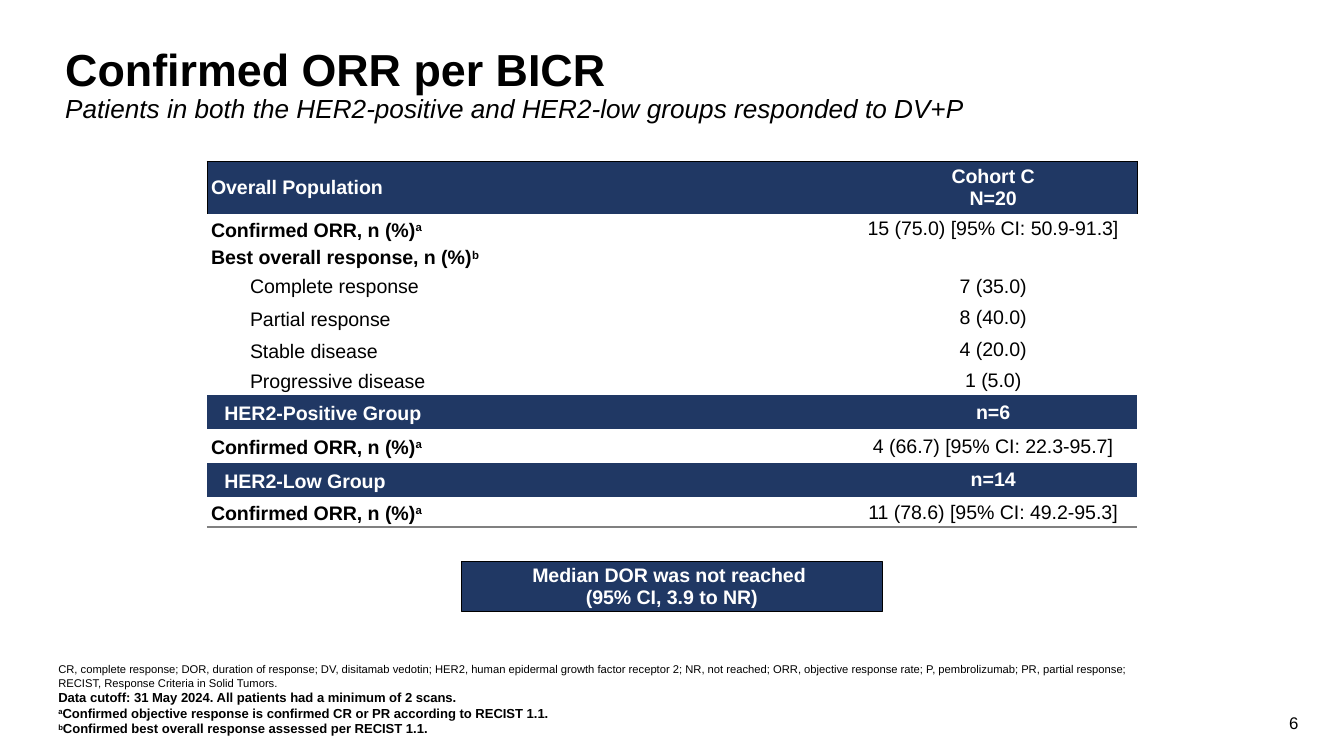
from dataclasses import dataclass

from lxml import etree
from pptx import Presentation
from pptx.dml.color import RGBColor
from pptx.enum.shapes import MSO_SHAPE
from pptx.enum.text import MSO_ANCHOR, PP_ALIGN
from pptx.oxml.ns import qn
from pptx.util import Inches, Pt

LEFT, CENTER, RIGHT = PP_ALIGN.LEFT, PP_ALIGN.CENTER, PP_ALIGN.RIGHT
TOP, MIDDLE, BOTTOM = MSO_ANCHOR.TOP, MSO_ANCHOR.MIDDLE, MSO_ANCHOR.BOTTOM
RECTANGLE = MSO_SHAPE.RECTANGLE
PLAIN_TABLE = "{2D5ABB26-0587-4C30-8999-92F81FD0307C}"
GRID_COLUMNS, GRID_ROWS = 100, 56.25


@dataclass(frozen=True)
class Theme:
    font: str = "Arial"
    ink: str = "000000"
    paper: str = "FFFFFF"
    navy: str = "203864"
    rule: str = "808080"
    title: float = 24
    subtitle: float = 14
    body: float = 10.5
    page: float = 9
    note: float = 7
    abbreviation: float = 6


THEME = Theme()


def write(frame, paragraphs, anchor=TOP, align=LEFT, spacing=None, indent=0, **base):
    frame.word_wrap = True
    frame.vertical_anchor = anchor
    for index, segments in enumerate(paragraphs):
        paragraph = frame.paragraphs[0] if index == 0 else frame.add_paragraph()
        paragraph.alignment = align
        if spacing:
            paragraph.line_spacing = spacing
        if indent:
            paragraph._p.get_or_add_pPr().set("marL", str(Inches(indent)))
        for text, changes in segments:
            for part, line in enumerate(text.split("\n")):
                if part:
                    paragraph.add_line_break()
                if line:
                    style_run(paragraph.add_run(), line, **{**base, **changes})


def style_run(run, text, size=THEME.body, color=THEME.ink, bold=False, italic=False, raised=False):
    run.text = text
    font = run.font
    font.name, font.size = THEME.font, Pt(size)
    font.bold, font.italic = bold, italic
    font.color.rgb = RGBColor.from_string(color)
    if raised:
        font._element.set("baseline", "30000")


def plain(*lines):
    return [[(line, {})] for line in lines]


def marked(text, mark):
    return [[(text, {}), (mark, {"raised": True})]]


class SlideBuilder:
    def __init__(self, presentation, theme):
        self.theme = theme
        self.slide = presentation.slides.add_slide(presentation.slide_layouts[6])
        self.column = presentation.slide_width / GRID_COLUMNS
        self.row = presentation.slide_height / GRID_ROWS

    def place(self, column, row, columns, rows):
        return (round(column * self.column), round(row * self.row),
                round(columns * self.column), round(rows * self.row))

    def text(self, area, paragraphs, **style):
        box = self.slide.shapes.add_textbox(*self.place(*area))
        write(box.text_frame, paragraphs, **style)

    def callout(self, area, paragraphs, **style):
        box = self.slide.shapes.add_shape(RECTANGLE, *self.place(*area))
        box.shadow.inherit = False
        box.fill.solid()
        box.fill.fore_color.rgb = RGBColor.from_string(self.theme.navy)
        box.line.color.rgb = RGBColor.from_string(self.theme.ink)
        box.line.width = Pt(0.75)
        write(box.text_frame, paragraphs, anchor=MIDDLE, align=CENTER, **style)

    def table(self, area, widths, heights):
        table = self.slide.shapes.add_table(len(heights), len(widths), *self.place(*area)).table
        table._tbl.tblPr.find(qn("a:tableStyleId")).text = PLAIN_TABLE
        table.first_row = table.horz_banding = False
        for column, width in zip(table.columns, widths):
            column.width = round(width * self.column)
        for row, height in zip(table.rows, heights):
            row.height = round(height * self.row)
        return table

    def cell(self, cell, paragraphs, fill=None, borders=(), **style):
        cell.margin_left = cell.margin_right = Inches(0.03)
        cell.margin_top = cell.margin_bottom = 0
        for side, color, width in borders:
            self.border(cell, side, color, width)
        if fill:
            cell.fill.solid()
            cell.fill.fore_color.rgb = RGBColor.from_string(fill)
        else:
            cell.fill.background()
        write(cell.text_frame, paragraphs, **style)
        cell.vertical_anchor = MIDDLE
        if not paragraphs:
            end = etree.SubElement(cell.text_frame.paragraphs[0]._p, qn("a:endParaRPr"))
            end.set("sz", str(round(self.theme.body * 100)))

    def border(self, cell, side, color, width):
        edge = etree.SubElement(cell._tc.get_or_add_tcPr(), qn(f"a:ln{side}"), w=str(Pt(width)))
        paint = etree.SubElement(edge, qn("a:solidFill"))
        etree.SubElement(paint, qn("a:srgbClr"), val=color)


def add_responses(builder):
    theme = builder.theme
    confirmed = marked("Confirmed ORR, n (%)", "a")
    header_edges = [[("L", theme.ink, 0.5), ("T", theme.ink, 0.5)],
                    [("R", theme.ink, 0.5), ("T", theme.ink, 0.5)]]
    closing_edges = [[("B", theme.rule, 1)]] * 2
    open_edges = [()] * 2
    band = {"fill": theme.navy, "color": theme.paper}
    label = {"bold": True, "spacing": 1.15}
    group = {"bold": True, "spacing": 1.15, "indent": 0.1}
    response = {"spacing": 1.15, "indent": 0.29}
    white = {"fill": theme.paper}
    header, tight, normal, tall = 3.9, 2.14, 2.24, 2.53
    rows = [
        (header, plain("Overall Population"), plain("Cohort C", "N=20"),
         band, {"bold": True}, header_edges),
        (normal, confirmed, plain("15 (75.0) [95% CI: 50.9-91.3]"), {}, label, open_edges),
        (tight, marked("Best overall response, n (%)", "b"), [], {}, {"bold": True}, open_edges),
        (tight, plain("Complete response"), plain("7 (35.0)"), {}, {"indent": 0.29}, open_edges),
        (tall, plain("Partial response"), plain("8 (40.0)"), {}, response, open_edges),
        (normal, plain("Stable disease"), plain("4 (20.0)"), {}, response, open_edges),
        (normal, plain("Progressive disease"), plain("1 (5.0)"), {}, response, open_edges),
        (tall, plain("HER2-Positive Group"), plain("n=6"), band, group, open_edges),
        (tall, confirmed, plain("4 (66.7) [95% CI: 22.3-95.7]"), white, label, open_edges),
        (tall, plain("HER2-Low Group"), plain("n=14"), band, group, open_edges),
        (normal, confirmed, plain("11 (78.6) [95% CI: 49.2-95.3]"), white, label, closing_edges),
    ]
    heights = [row[0] for row in rows]
    table = builder.table((15.4, 12, 69.2, sum(heights)), (47.8, 21.4), heights)
    for index, (_, measure, result, look, measure_style, edges) in enumerate(rows):
        builder.cell(table.cell(index, 0), measure, borders=edges[0], **look, **measure_style)
        builder.cell(table.cell(index, 1), result, borders=edges[1], align=CENTER,
                     bold=look is band, **look)


def main():
    presentation = Presentation()
    presentation.slide_width = Inches(10)
    presentation.slide_height = presentation.slide_width * 9 // 16
    builder = SlideBuilder(presentation, THEME)

    builder.text((3.87, 3.07, 76.1, 6.9), [[
        ("Confirmed ORR per BICR\n", {"size": THEME.title, "bold": True}),
        ("Patients in both the HER2-positive and HER2-low groups responded to DV+P",
         {"size": THEME.subtitle, "italic": True}),
    ]], spacing=0.9)

    abbreviations = (
        "CR, complete response; DOR, duration of response; DV, disitamab vedotin; "
        "HER2, human epidermal growth factor receptor 2; NR, not reached; "
        "ORR, objective response rate; P, pembrolizumab; PR, partial response; \n"
        "RECIST, Response Criteria in Solid Tumors.\n")
    builder.text((3.36, 50.6, 97, 4.7), [[
        (abbreviations, {"size": THEME.abbreviation, "bold": False}),
        ("Data cutoff: 31 May 2024. All patients had a minimum of 2 scans.\n", {}),
        ("a", {"raised": True}),
        ("Confirmed objective response is confirmed CR or PR according to RECIST 1.1. \n", {}),
        ("b", {"raised": True}),
        ("Confirmed best overall response assessed per RECIST 1.1.", {}),
    ]], anchor=BOTTOM, size=THEME.note, bold=True)

    add_responses(builder)
    builder.callout((34.35, 41.8, 31.3, 3.7),
                    plain("Median DOR was not reached \n(95% CI, 3.9 to NR)"),
                    spacing=0.95, color=THEME.paper, bold=True)
    builder.text((75.1, 52.3, 22.5, 3), plain("6"), anchor=MIDDLE, align=RIGHT, size=THEME.page)
    presentation.save("out.pptx")


if __name__ == "__main__":
    main()
